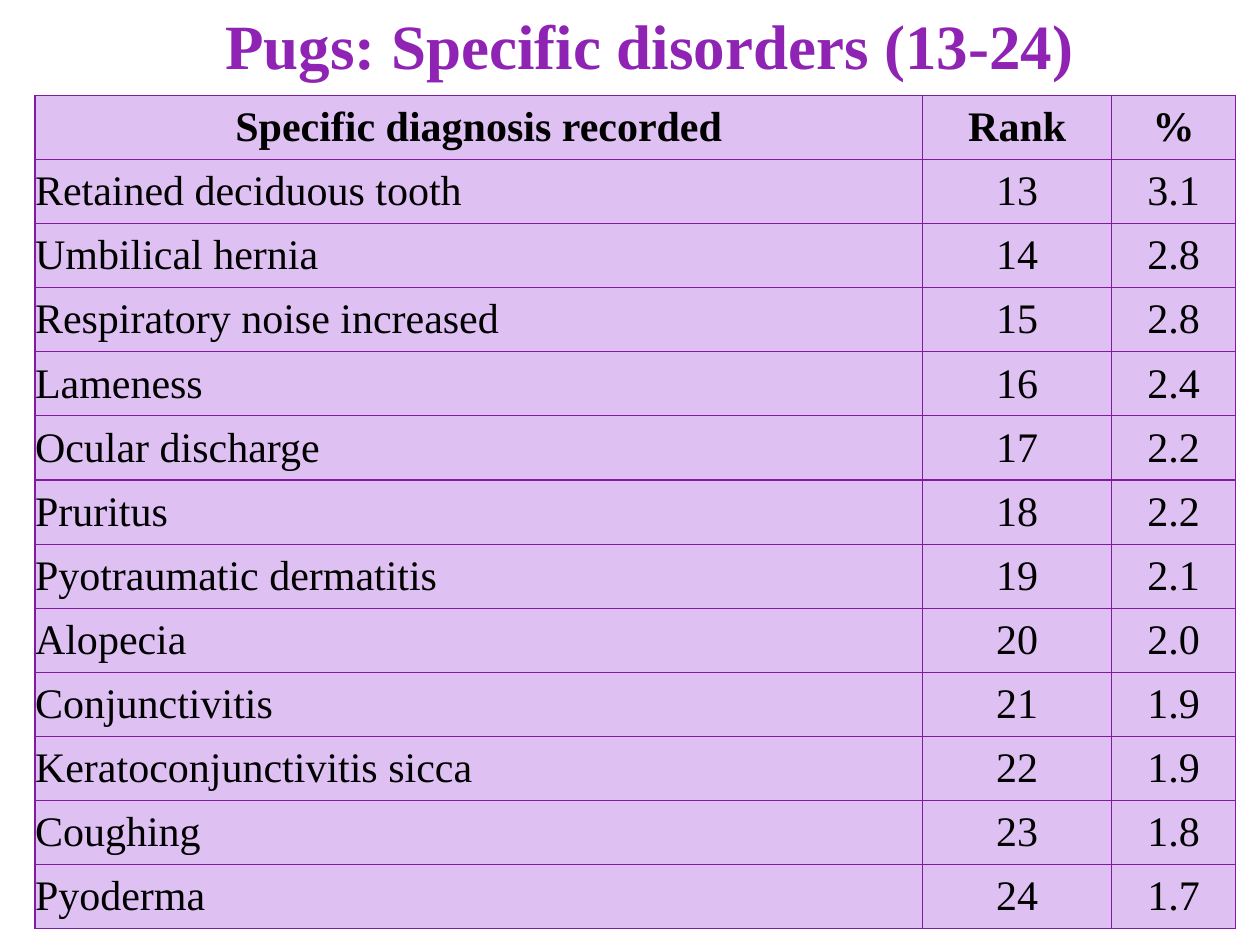
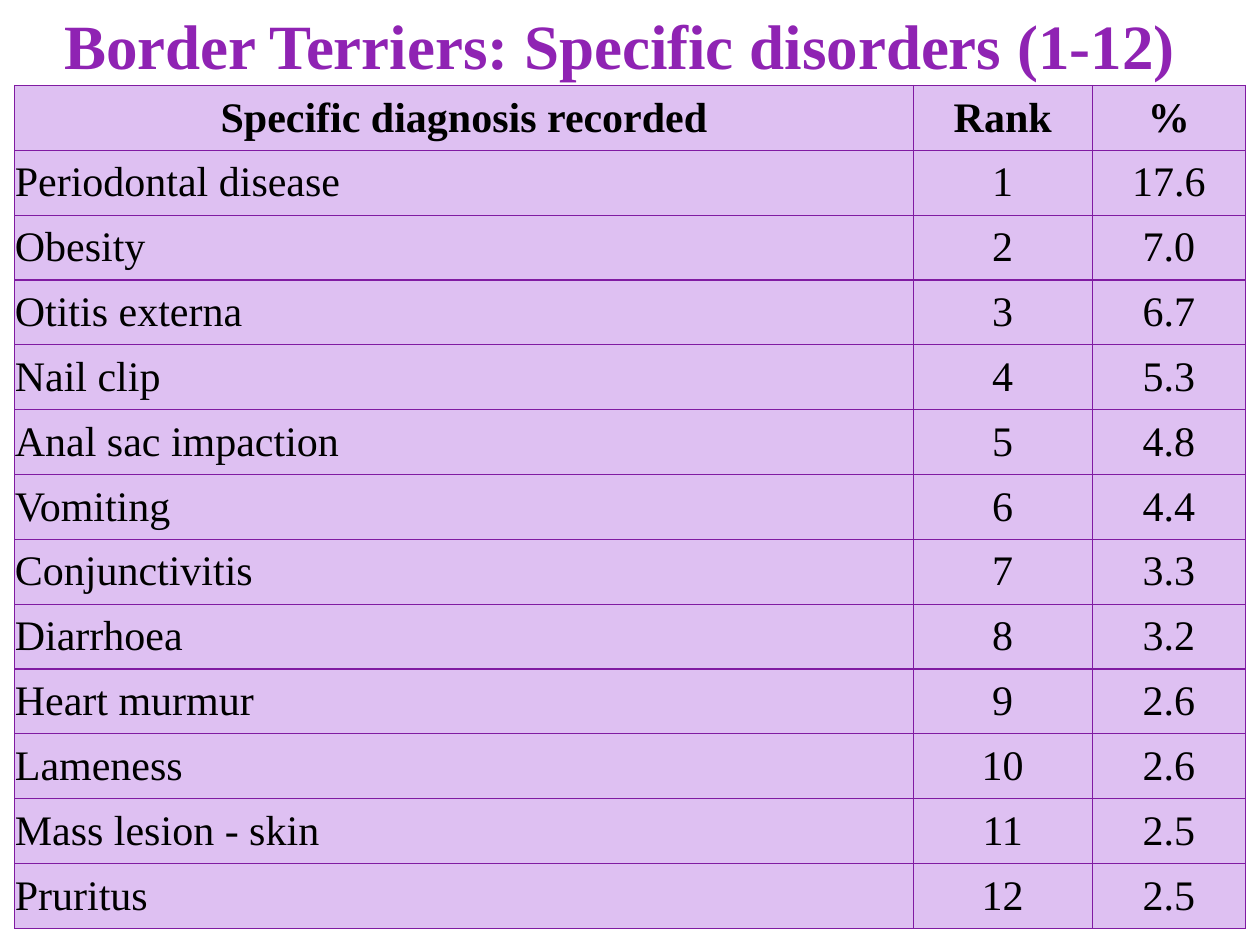
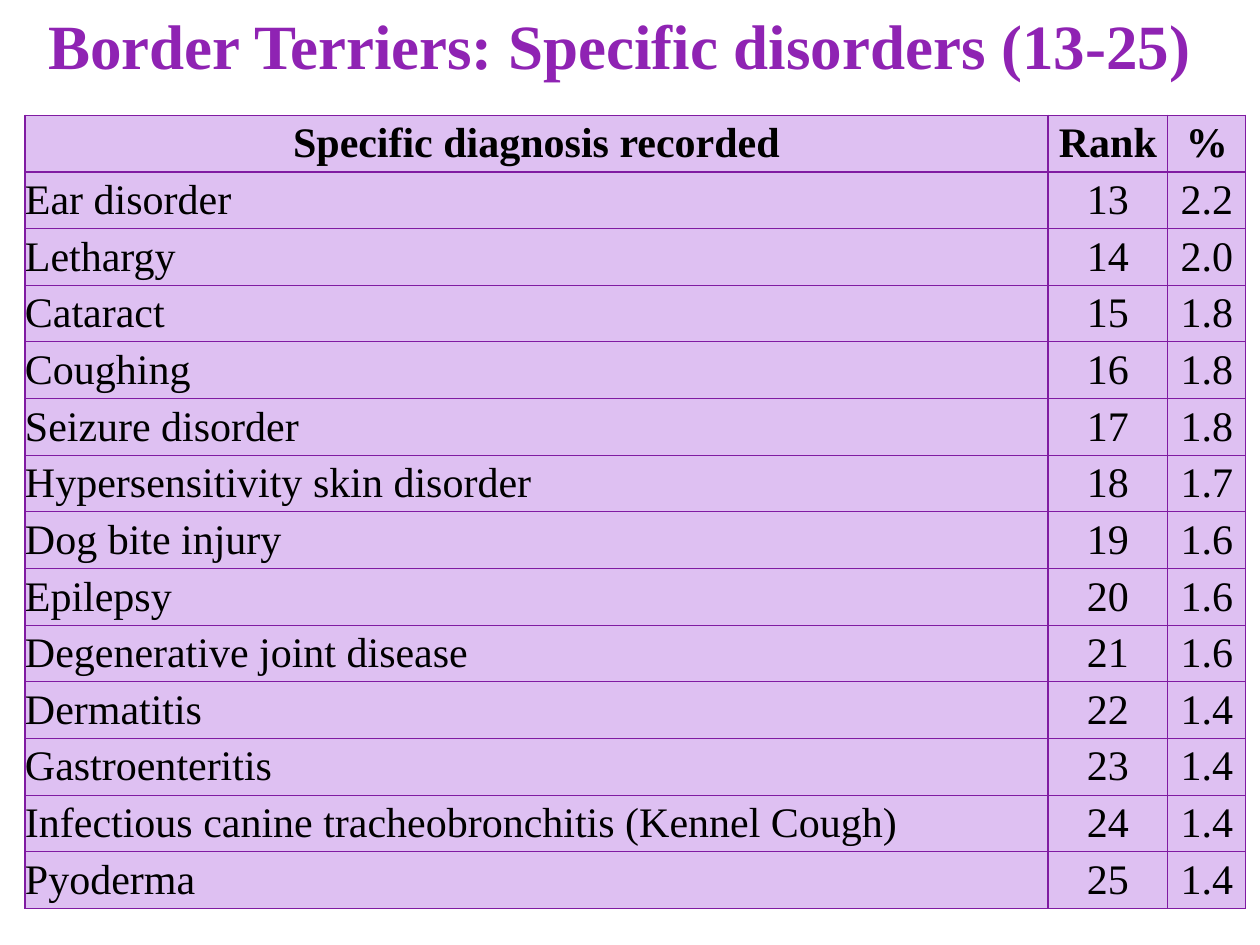
from dataclasses import dataclass

from lxml import etree
from pptx import Presentation
from pptx import util as u
from pptx.dml.color import RGBColor
from pptx.enum import text
from pptx.oxml import ns

# Shared style
WIDTH, HEIGHT = u.Inches(10), u.Inches(7.5)
FONT = "Times New Roman"
TITLE_COLOUR, TEXT_COLOUR = "8F23B3", "000000"
CELL_COLOUR, BORDER_COLOUR = "DEC0F2", "801BA2"
TITLE_SIZE, CELL_SIZE, BORDER_WIDTH = 36, 24, 0.75
TITLE_HEIGHT = 0.08
TITLE_TOP_INSET = u.Inches(0.05)
HEADER = ("Specific diagnosis recorded", "Rank", "%")


@dataclass
class DisorderSlide:
    """Positions and column widths are percentages of the slide's size."""
    title: str
    title_left: float
    title_width: float
    table_left: float
    table_top: float
    table_height: float
    columns: tuple[float, float, float]
    first_rank: int
    disorders: list[tuple[str, str]]


SLIDES = [
    DisorderSlide(
        "Pugs: Specific disorders (13-24)", 12.2, 78.7,
        2.78, 10.1, 88.2, (70.45, 15, 9.83), 13,
        [("Retained deciduous tooth", "3.1"), ("Umbilical hernia", "2.8"),
         ("Respiratory noise increased", "2.8"), ("Lameness", "2.4"),
         ("Ocular discharge", "2.2"), ("Pruritus", "2.2"),
         ("Pyotraumatic dermatitis", "2.1"), ("Alopecia", "2.0"),
         ("Conjunctivitis", "1.9"), ("Keratoconjunctivitis sicca", "1.9"),
         ("Coughing", "1.8"), ("Pyoderma", "1.7")]),
    DisorderSlide(
        "Border Terriers: Specific disorders (1-12)", 2, 94.4,
        1.18, 9.05, 89.2, (71.3, 14.2, 12.2), 1,
        [("Periodontal disease", "17.6"), ("Obesity", "7.0"),
         ("Otitis externa", "6.7"), ("Nail clip", "5.3"),
         ("Anal sac impaction", "4.8"), ("Vomiting", "4.4"),
         ("Conjunctivitis", "3.3"), ("Diarrhoea", "3.2"),
         ("Heart murmur", "2.6"), ("Lameness", "2.6"),
         ("Mass lesion - skin", "2.5"), ("Pruritus", "2.5")]),
    DisorderSlide(
        "Border Terriers: Specific disorders (13-25)", 2, 94.4,
        1.98, 12.2, 83.95, (81.2, 9.5, 6.2), 13,
        [("Ear disorder", "2.2"), ("Lethargy", "2.0"), ("Cataract", "1.8"),
         ("Coughing", "1.8"), ("Seizure disorder", "1.8"),
         ("Hypersensitivity skin disorder", "1.7"),
         ("Dog bite injury", "1.6"), ("Epilepsy", "1.6"),
         ("Degenerative joint disease", "1.6"), ("Dermatitis", "1.4"),
         ("Gastroenteritis", "1.4"),
         ("Infectious canine tracheobronchitis (Kennel Cough)", "1.4"),
         ("Pyoderma", "1.4")]),
]


def colour(value: str) -> RGBColor:
    return RGBColor.from_string(value)


def across(percent: float) -> int:
    return round(WIDTH * percent / 100)


def down(percent: float) -> int:
    return round(HEIGHT * percent / 100)


def write(paragraph, words: str, size: float, fill: str, bold: bool, centred: bool) -> None:
    paragraph.alignment = text.PP_ALIGN.CENTER if centred else text.PP_ALIGN.LEFT
    run = paragraph.add_run()
    run.text = words
    run.font.name, run.font.size, run.font.bold = FONT, u.Pt(size), bold
    run.font.color.rgb = colour(fill)


def add_borders(cell) -> None:
    properties = cell._tc.get_or_add_tcPr()
    for side in ("lnL", "lnR", "lnT", "lnB"):
        line = etree.SubElement(properties, ns.qn(f"a:{side}"), w=str(u.Pt(BORDER_WIDTH)))
        fill = etree.SubElement(line, ns.qn("a:solidFill"))
        etree.SubElement(fill, ns.qn("a:srgbClr"), val=BORDER_COLOUR)


def add_title(slide, content: DisorderSlide) -> None:
    box = slide.shapes.add_textbox(across(content.title_left), 0,
                                   across(content.title_width), round(HEIGHT * TITLE_HEIGHT))
    frame = box.text_frame
    frame.word_wrap = True
    frame.margin_top, frame.margin_bottom = TITLE_TOP_INSET, 0
    write(frame.paragraphs[0], content.title, TITLE_SIZE, TITLE_COLOUR, True, True)


def add_disorder_table(slide, content: DisorderSlide) -> None:
    ranked = [(name, str(rank), share) for rank, (name, share)
              in enumerate(content.disorders, content.first_rank)]
    rows = [HEADER, *ranked]
    height = down(content.table_height)
    table = slide.shapes.add_table(
        len(rows), len(HEADER), across(content.table_left), down(content.table_top),
        across(sum(content.columns)), height).table
    for column, width in zip(table.columns, content.columns):
        column.width = across(width)
    for row_index, values in enumerate(rows):
        table.rows[row_index].height = height // len(rows)
        is_header = row_index == 0
        for column_index, value in enumerate(values):
            cell = table.cell(row_index, column_index)
            cell.margin_left = cell.margin_right = cell.margin_top = cell.margin_bottom = 0
            cell.vertical_anchor = text.MSO_ANCHOR.MIDDLE
            add_borders(cell)
            cell.fill.solid()
            cell.fill.fore_color.rgb = colour(CELL_COLOUR)
            write(cell.text_frame.paragraphs[0], value, CELL_SIZE, TEXT_COLOUR,
                  is_header, is_header or column_index > 0)


def main() -> None:
    presentation = Presentation()
    presentation.slide_width, presentation.slide_height = WIDTH, HEIGHT
    for content in SLIDES:
        slide = presentation.slides.add_slide(presentation.slide_layouts[6])
        add_disorder_table(slide, content)
        add_title(slide, content)
    presentation.save("out.pptx")


if __name__ == "__main__":
    main()
